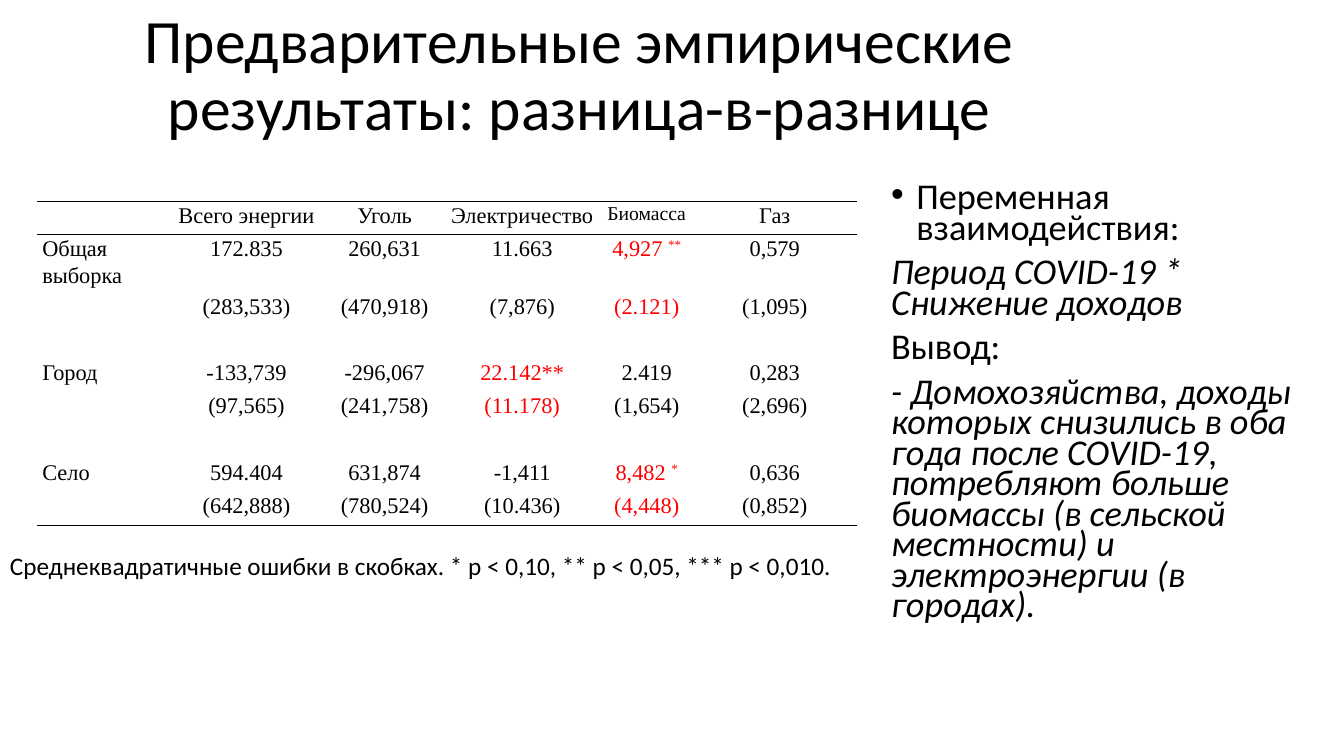
from lxml import etree
from pptx import Presentation, util as u
from pptx.dml.color import RGBColor
from pptx.enum import text
from pptx.oxml.ns import qn

BLACK, RED = "000000", "FF0000"


def format_run(run, size, font="Calibri", color=BLACK):
    run.font.size = u.Pt(size)
    run.font.name = font
    run.font.color.rgb = RGBColor.from_string(color)


def add_text(left, top, width, height, lines, size, spacing=1.0):
    frame = slide.shapes.add_textbox(*map(u.Inches, (left, top, width, height))).text_frame
    frame.word_wrap = True
    frame.text = "\n".join(lines)
    for paragraph in frame.paragraphs:
        paragraph.line_spacing = spacing
        format_run(paragraph.runs[0], size)
    return frame


presentation = Presentation()
presentation.slide_width = u.Inches(13.33)
presentation.slide_height = u.Inches(7.5)
slide = presentation.slides.add_slide(presentation.slide_layouts[6])

# Title
title = add_text(0, 0.04, 11.5, 1.45,
                 ["Предварительные эмпирические результаты: разница-в-разнице"], 44, 0.9)
title.vertical_anchor = text.MSO_ANCHOR.MIDDLE
title.paragraphs[0].alignment = text.PP_ALIGN.CENTER

# Regression table: "^" starts a superscript
rows = [
    ["", "Всего энергии", "Уголь", "Электричество", "Биомасса", "Газ"],
    ["Общая выборка", "172.835", "260,631", "11.663", "4,927 ^**", "0,579"],
    ["", "(283,533)", "(470,918)", "(7,876)", "(2.121)", "(1,095)"],
    [""] * 6,
    ["Город", "-133,739", "-296,067", "22.142**", "2.419", "0,283"],
    ["", "(97,565)", "(241,758)", "(11.178)", "(1,654)", "(2,696)"],
    [""] * 6,
    ["Село", "594.404", "631,874", "-1,411", "8,482 ^*", "0,636"],
    ["", "(642,888)", "(780,524)", "(10.436)", "(4,448)", "(0,852)"],
]
significant = {(1, 4), (2, 4), (4, 3), (5, 3), (7, 4), (8, 4)}
ruled_edges = {0: ("lnT", "lnB"), 1: ("lnT",), len(rows) - 1: ("lnB",)}
column_widths = [1.29, 1.57, 1.17, 1.56, 0.91, 1.63]
row_height = 0.33

table = slide.shapes.add_table(
    len(rows), len(column_widths), u.Inches(0.37), u.Inches(2),
    u.Inches(sum(column_widths)), u.Inches(row_height * len(rows))).table
table.first_row = table.horz_banding = False
for column, width in zip(table.columns, column_widths):
    column.width = u.Inches(width)

for row_index, row in enumerate(rows):
    table.rows[row_index].height = u.Inches(row_height)
    for column_index, value in enumerate(row):
        cell = table.cell(row_index, column_index)
        cell.margin_left = cell.margin_right = u.Inches(0.05)
        cell.margin_top = cell.margin_bottom = 0
        paragraph = cell.text_frame.paragraphs[0]
        paragraph.line_spacing = 1.07
        if column_index:
            paragraph.alignment = text.PP_ALIGN.CENTER
        size = 14 if value == "Биомасса" else 16
        color = RED if (row_index, column_index) in significant else BLACK
        for part_index, part in enumerate(value.split("^") if value else []):
            run = paragraph.add_run()
            run.text = part
            format_run(run, size, "Times New Roman", color)
            if part_index:
                run.font._element.set("baseline", "30000")
        if not value:
            etree.SubElement(paragraph._p, qn("a:endParaRPr"), sz="1600")

        # Borders come before the fill in the cell properties
        properties = cell._tc.get_or_add_tcPr()
        for edge in ("lnL", "lnR", "lnT", "lnB"):
            line = etree.SubElement(properties, qn("a:" + edge), w=str(u.Pt(1)))
            if edge in ruled_edges.get(row_index, ()):
                fill = etree.SubElement(line, qn("a:solidFill"))
                etree.SubElement(fill, qn("a:srgbClr"), val=BLACK)
            else:
                etree.SubElement(line, qn("a:noFill"))
        cell.fill.background()

# Interpretation
conclusions = add_text(8.74, 1.79, 4.6, 4.76, [
    "Переменная взаимодействия:",
    "Период COVID-19 * Снижение доходов",
    "Вывод:",
    "- Домохозяйства, доходы которых снизились в оба года после COVID-19, "
    "потребляют больше биомассы (в сельской местности) и электроэнергии (в городах).",
], 25.9, 0.7)
for index, paragraph in enumerate(conclusions.paragraphs):
    paragraph.space_before = u.Pt(10)
    paragraph.runs[0].font.italic = index in (1, 3)
bullet_properties = conclusions.paragraphs[0]._p.get_or_add_pPr()
bullet_properties.set("marL", str(u.Inches(0.25)))
bullet_properties.set("indent", str(u.Inches(-0.25)))
etree.SubElement(bullet_properties, qn("a:buFont"), typeface="Arial")
etree.SubElement(bullet_properties, qn("a:buChar"), char="•")

# Table note
add_text(0, 5.41, 8.51, 0.4,
         ["Среднеквадратичные ошибки в скобках. * р < 0,10, ** р < 0,05, *** р < 0,010."], 18)

presentation.save("out.pptx")
